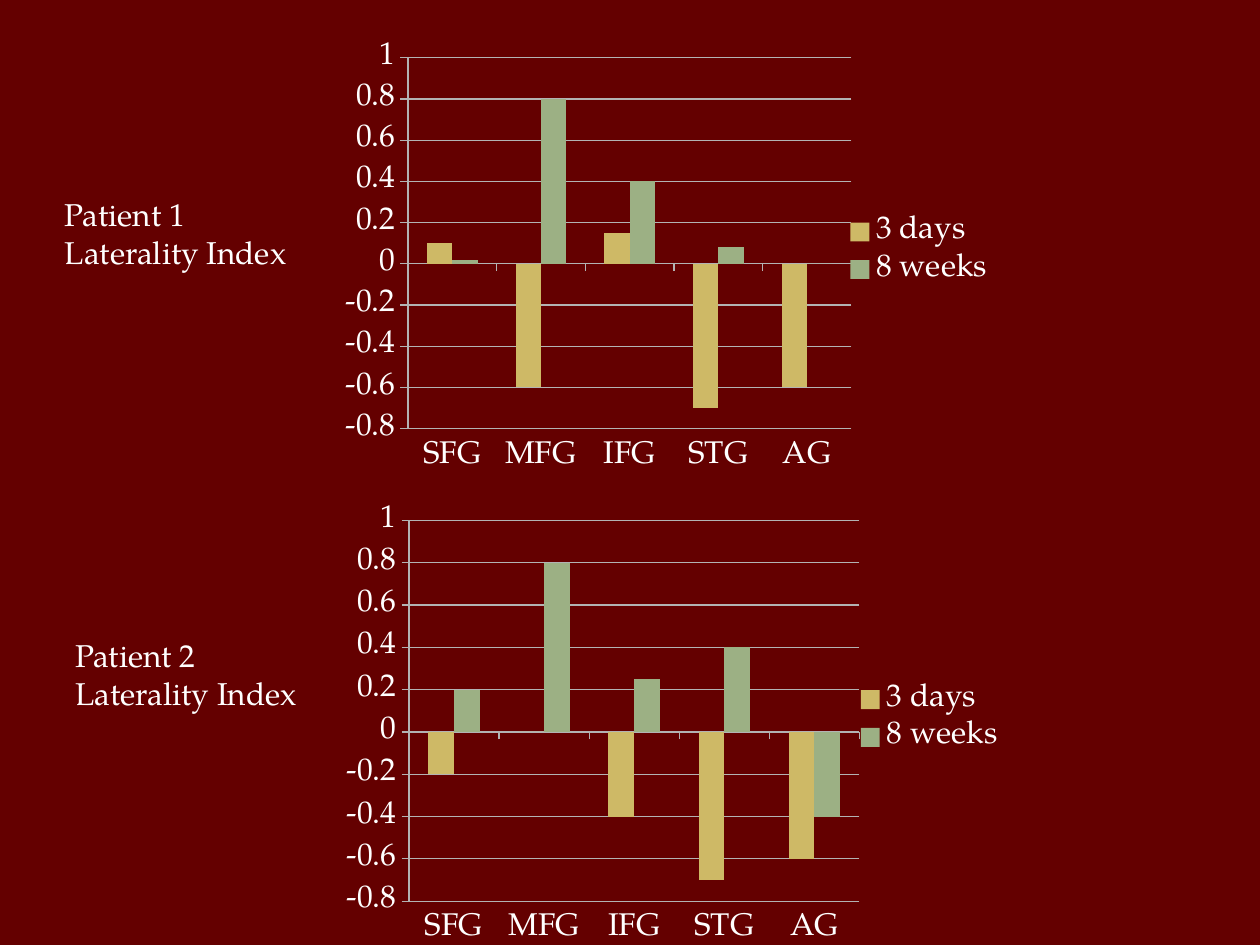
"""Build a slide with the laterality index charts of two patients."""
from dataclasses import dataclass

from lxml import etree
from pptx import Presentation
from pptx import util as u
from pptx.chart.data import CategoryChartData
from pptx.dml.color import RGBColor
from pptx.enum import chart as ch
from pptx.enum import text

PX = 9525
FONT = "TeX Gyre Pagella"
WHITE, BACKGROUND, GRID = "FFFFFF", "640000", "B3B3B3"
REGIONS = ["SFG", "MFG", "IFG", "STG", "AG"]
SERIES_COLORS = {"3 days": "CEB966", "8 weeks": "9CB084"}
PLOT_LAYOUT = {"x": 0.107, "y": 0.06, "w": 0.66, "h": 0.846}


@dataclass
class Box:
    x: int
    y: int
    w: int
    h: int

    def emu(self) -> list[int]:
        return [v * PX for v in (self.x, self.y, self.w, self.h)]


@dataclass
class Patient:
    name: str
    label: Box
    chart: Box
    values: list[list[float]]


PATIENTS = [
    Patient("Patient 1", Box(40, 144, 190, 68), Box(256, 24, 512, 336),
            [[0.1, -0.6, 0.15, -0.7, -0.6], [0.02, 0.8, 0.4, 0.08, 0]]),
    Patient("Patient 2", Box(48, 480, 190, 68), Box(256, 376, 520, 344),
            [[-0.2, 0, -0.4, -0.7, -0.6], [0.2, 0.8, 0.25, 0.4, -0.4]]),
]


def rgb(value: str) -> RGBColor:
    return RGBColor.from_string(value)


def style_font(font) -> None:
    font.name, font.size = FONT, u.Pt(18)
    font.color.rgb = rgb(WHITE)


def set_plot_layout(chart) -> None:
    area = chart._chartSpace.chart.plotArea
    ns = area.nsmap["c"]
    for old in area.findall(f"{{{ns}}}layout"):
        area.remove(old)
    layout = etree.Element(f"{{{ns}}}layout")
    manual = etree.SubElement(layout, f"{{{ns}}}manualLayout")
    settings = {"layoutTarget": "inner", "xMode": "edge", "yMode": "edge", **PLOT_LAYOUT}
    for tag, value in settings.items():
        etree.SubElement(manual, f"{{{ns}}}{tag}").set("val", str(value))
    area.insert(0, layout)


def add_patient_chart(s, patient: Patient) -> None:
    data = CategoryChartData()
    data.categories = REGIONS
    for name, values in zip(SERIES_COLORS, patient.values):
        data.add_series(name, values)
    chart = s.shapes.add_chart(
        ch.XL_CHART_TYPE.COLUMN_CLUSTERED, *patient.chart.emu(), data).chart
    style_font(chart.font)
    chart.has_title = False
    chart.has_legend = True
    chart.legend.position = ch.XL_LEGEND_POSITION.RIGHT
    chart.legend.include_in_layout = False

    plot = chart.plots[0]
    plot.gap_width, plot.overlap, plot.vary_by_categories = 150, 0, False
    for series, color in zip(plot.series, SERIES_COLORS.values()):
        series.invert_if_negative = False
        series.format.fill.solid()
        series.format.fill.fore_color.rgb = rgb(color)

    cat, val = chart.category_axis, chart.value_axis
    cat.tick_label_position = ch.XL_TICK_LABEL_POSITION.LOW
    val.minimum_scale, val.maximum_scale, val.major_unit = -0.8, 1, 0.2
    val.has_major_gridlines = True
    for axis in (cat, val):
        axis.major_tick_mark = ch.XL_TICK_MARK.OUTSIDE
    for line in (cat.format.line, val.format.line, val.major_gridlines.format.line):
        line.color.rgb = rgb(GRID)
        line.width = u.Pt(0.75)
    set_plot_layout(chart)


def add_label(s, patient: Patient) -> None:
    tf = s.shapes.add_textbox(*patient.label.emu()).text_frame
    tf.word_wrap = False
    tf.auto_size = text.MSO_AUTO_SIZE.SHAPE_TO_FIT_TEXT
    tf.text = f"{patient.name}\nLaterality Index"
    for p in tf.paragraphs:
        for r in p.runs:
            style_font(r.font)


def main() -> None:
    prs = Presentation()
    prs.slide_width, prs.slide_height = 960 * PX, 720 * PX
    s = prs.slides.add_slide(prs.slide_layouts[6])
    s.background.fill.solid()
    s.background.fill.fore_color.rgb = rgb(BACKGROUND)
    for patient in PATIENTS:
        add_patient_chart(s, patient)
    for patient in PATIENTS:
        add_label(s, patient)
    prs.save("out.pptx")


if __name__ == "__main__":
    main()
